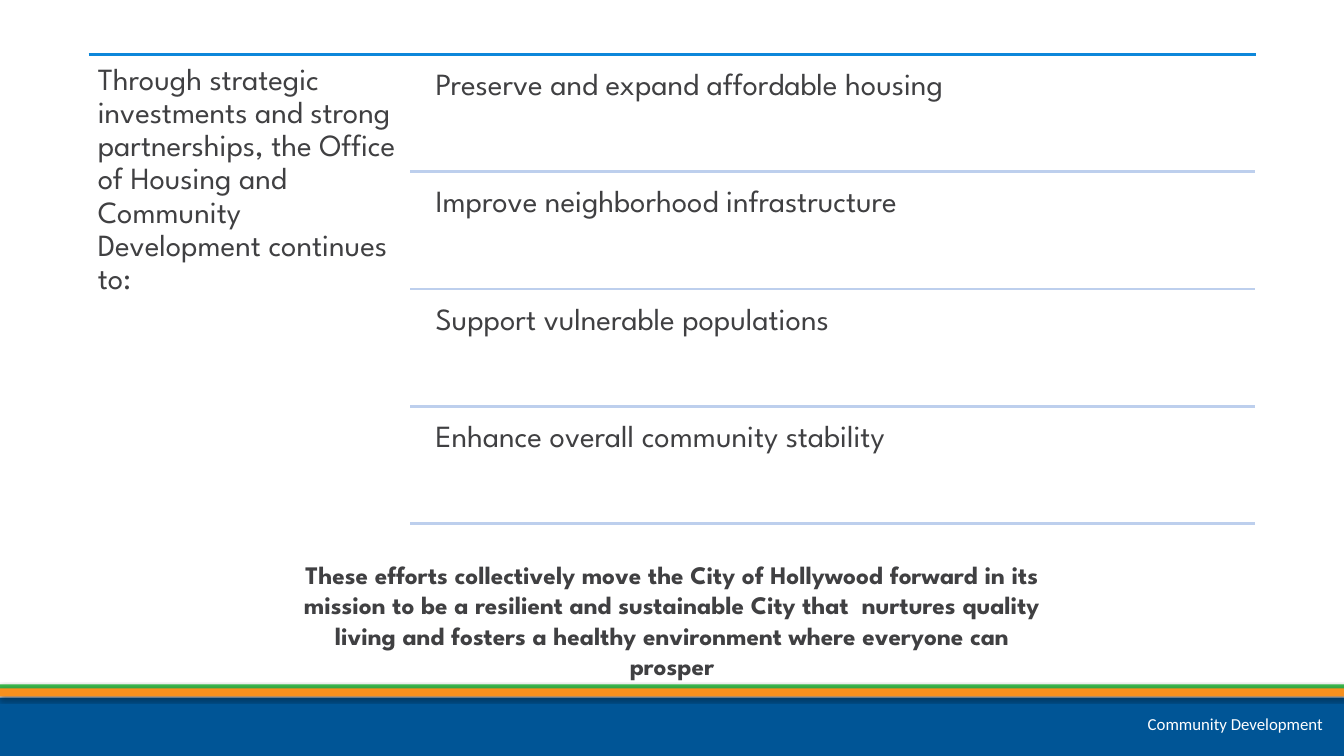
from lxml import etree
from pptx import Presentation
from pptx.dml.color import RGBColor
from pptx.enum import shapes, text
from pptx.oxml import parse_xml
from pptx.oxml.ns import nsdecls, qn
from pptx.util import Inches, Pt

INK = "404042"
FONT = "League Spartan"
GOALS = [
    "Preserve and expand affordable housing",
    "Improve neighborhood infrastructure",
    "Support vulnerable populations",
    "Enhance overall community stability",
]
INTRO = ("Through strategic investments and strong partnerships, the Office of "
         "Housing and Community Development continues to:")
CLOSING = ("These efforts collectively move the City of Hollywood forward in its "
           "mission to be a resilient and sustainable City that  nurtures quality "
           "living and fosters a healthy environment where everyone can prosper")


def rgb(value):
    return RGBColor.from_string(value)


def add_text(slide, box, content, size, font=FONT, color=INK, bold=False,
             align=text.PP_ALIGN.LEFT, inset=None, spacing=None):
    tf = slide.shapes.add_textbox(*map(Inches, box)).text_frame
    tf.word_wrap = True
    if inset is not None:
        tf.margin_left = tf.margin_right = Inches(inset)
        tf.margin_top = tf.margin_bottom = Inches(inset)
    p = tf.paragraphs[0]
    p.alignment = align
    if spacing is not None:
        p.line_spacing = spacing
    r = p.add_run()
    r.text = content
    r.font.name = font
    r.font.size = Pt(size)
    r.font.bold = bold
    r.font.color.rgb = rgb(color)


def add_rule(slide, left, right, y, color):
    line = slide.shapes.add_connector(
        shapes.MSO_CONNECTOR.STRAIGHT,
        Inches(left), Inches(y), Inches(right), Inches(y))
    line.line.color.rgb = rgb(color)
    line.line.width = Pt(2)
    etree.SubElement(line._element.spPr, qn("a:effectLst"))


def add_band(slide, left, top, width, height, color):
    """Draw a filled footer stripe with a soft shadow below it."""
    sp = slide.shapes.add_shape(
        shapes.MSO_SHAPE.RECTANGLE, *map(Inches, (left, top, width, height)))
    sp.fill.solid()
    sp.fill.fore_color.rgb = rgb(color)
    sp.line.fill.background()
    sp.shadow.inherit = False
    effects = sp._element.spPr.find(qn("a:effectLst"))
    effects.append(parse_xml(
        f'<a:outerShdw {nsdecls("a")} blurRad="{Pt(3.1)}" dist="{Pt(1.8)}" '
        'dir="5400000" rotWithShape="0"><a:srgbClr val="000000">'
        '<a:alpha val="35000"/></a:srgbClr></a:outerShdw>'))


def add_footer(slide, left, top, width):
    add_band(slide, left, top, width, 0.05, "39B54A")
    add_band(slide, left, top + 0.13, width, 0.58, "005596")
    add_text(slide, (left + 2.78, top + 0.24, width - 2.89, 0.3),
             "Community Development", 12, font="Calibri", color="FFFFFF",
             align=text.PP_ALIGN.RIGHT)
    add_band(slide, left, top + 0.04, width, 0.08, "F7901E")


def add_goals(slide, left, top, width, height):
    """Place the introduction on the left and one ruled row per goal."""
    right = left + width
    body = {"size": 22, "inset": 0.09, "spacing": 0.9}
    add_rule(slide, left, right, top, "0D87DA")
    add_text(slide, (left, top, 3.2, height), INTRO, **body)
    gap = 0.055
    pitch = (height - gap) / len(GOALS)
    for i, goal in enumerate(GOALS):
        y = top + gap + i * pitch
        add_text(slide, (left + 3.35, y, width - 3.36, pitch - gap), goal, **body)
        add_rule(slide, left + 3.19, right - 0.01, y + pitch - gap, "BDCFED")


def main():
    prs = Presentation()
    prs.slide_width = Inches(13.33)
    prs.slide_height = Inches(7.5)
    slide = prs.slides.add_slide(prs.slide_layouts[6])
    add_footer(slide, 0, 6.79, 13.33)
    add_goals(slide, 0.88, 0.54, 11.58, 4.71)
    add_text(slide, (2.79, 5.5, 7.75, 1.31), CLOSING, 18, bold=True,
             align=text.PP_ALIGN.CENTER)
    prs.save("out.pptx")


if __name__ == "__main__":
    main()
